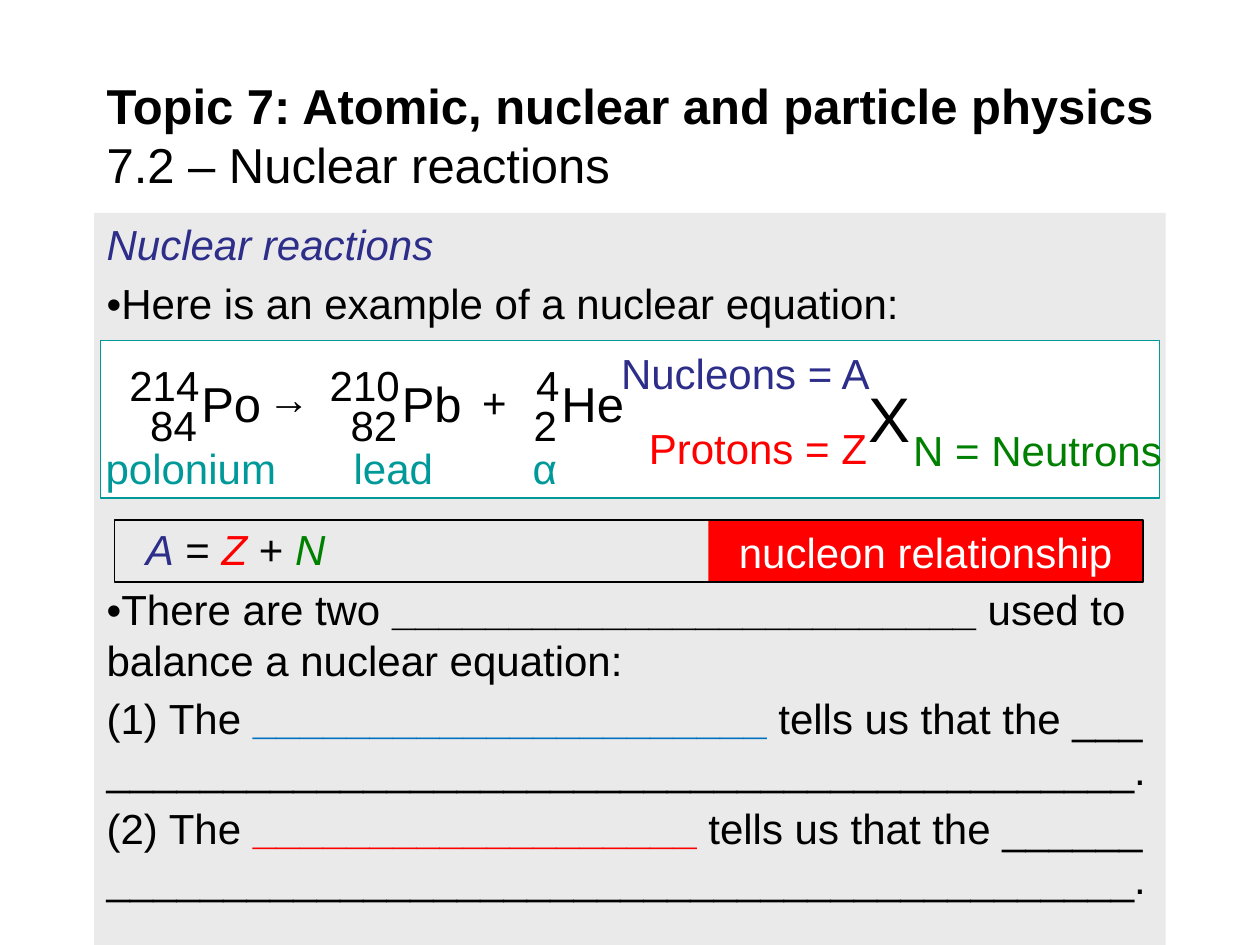
import pptx
import pptx.util
import pptx.dml.color
import pptx.enum.shapes
import pptx.enum.text

Cm, Pt = pptx.util.Cm, pptx.util.Pt
RGBColor = pptx.dml.color.RGBColor
ALIGN = pptx.enum.text.PP_ALIGN
ANCHOR = pptx.enum.text.MSO_ANCHOR

BLACK = RGBColor(0x00, 0x00, 0x00)
WHITE = RGBColor(0xFF, 0xFF, 0xFF)
GREY = RGBColor(0xEA, 0xEA, 0xEA)
NAVY = RGBColor(0x2D, 0x2D, 0x8A)
TEAL = RGBColor(0x00, 0x99, 0x99)
RED = RGBColor(0xFF, 0x00, 0x00)
GREEN = RGBColor(0x00, 0x80, 0x00)
BLUE = RGBColor(0x00, 0x70, 0xC0)


def add_rect(slide, x, y, w, h, fill=None, line=None, weight=1):
    sp = slide.shapes.add_shape(pptx.enum.shapes.MSO_SHAPE.RECTANGLE,
                                Cm(x), Cm(y), Cm(w), Cm(h))
    sp.shadow.inherit = False
    if fill is None:
        sp.fill.background()
    else:
        sp.fill.solid()
        sp.fill.fore_color.rgb = fill
    if line is None:
        sp.line.fill.background()
    else:
        sp.line.color.rgb = line
        sp.line.width = Pt(weight)
    return sp


def write(sp, paragraphs, size=24, color=BLACK, align=ALIGN.LEFT,
          anchor=ANCHOR.TOP, before=(), spacing=None, wrap=True):
    """Fill a shape with paragraphs, each a list of (text, format) runs."""
    tf = sp.text_frame
    tf.word_wrap = wrap
    tf.vertical_anchor = anchor
    for i, runs in enumerate(paragraphs):
        p = tf.add_paragraph() if i else tf.paragraphs[0]
        p.alignment = align
        if before:
            p.space_before = Pt(before[i])
        if spacing:
            p.line_spacing = spacing
        for text, style in runs:
            r = p.add_run()
            r.text = text
            r.font.name = "Arial"
            r.font.size = Pt(size)
            r.font.bold = style.get("bold", False)
            r.font.italic = style.get("italic", False)
            r.font.color.rgb = style.get("color", color)


def add_text(slide, x, y, w, h, text, **style):
    """Add a text box; text is a string or a list of paragraphs of runs."""
    sp = slide.shapes.add_textbox(Cm(x), Cm(y), Cm(w), Cm(h))
    write(sp, [[(text, {})]] if isinstance(text, str) else text, **style)


def add_title(slide, x, y, w, h):
    add_text(slide, x, y, w, h, [
        [("Topic 7: Atomic, nuclear and particle physics", {"bold": True})],
        [("7.2 – Nuclear reactions", {})],
    ], size=28, anchor=ANCHOR.MIDDLE)


def add_body(slide, x, y, w, h):
    rule = "_" * 44 + "."

    def law(number, blanks, color, tail):
        return [(f"({number}) The ", {}),
                ("_" * blanks + " ", {"bold": True, "color": color}),
                (f"tells us that the {'_' * tail} {rule}", {})]

    write(add_rect(slide, x, y, w, h, fill=GREY), [
        [("Nuclear reactions", {"italic": True, "color": NAVY})],
        [("•Here is an example of a nuclear equation:", {})],
        [("•There are two ", {}), ("_" * 25 + " ", {"bold": True}),
         ("used to balance a nuclear equation:", {})],
        law(1, 22, BLUE, 3),
        law(2, 19, RED, 6),
    ], before=(0, 4.8, 146, 4.8, 4.8))


def add_nuclide(slide, x, y, mass, charge, symbol):
    """Place a symbol at x with its numbers right-aligned before it."""
    add_text(slide, x, y + 0.3, 2.08, 1.09, symbol, size=28, spacing=0.9)
    for number, right, top in ((mass, 0.46, 0), (charge, 0.41, 0.8)):
        add_text(slide, x + right - 2.03, y + top, 2.03, 1.09, number,
                 align=ALIGN.RIGHT, spacing=0.9)


def add_equation(slide, x, y, w, h):
    add_rect(slide, x, y, w, h, fill=WHITE, line=TEAL, weight=0.75)
    nuclides = (
        (1.78, "214", "84", "Po", -0.15, 3.99, "polonium"),
        (5.82, "210", "82", "Pb", 4.85, 2.64, "lead"),
        (9.04, "4", "2", "He", 8.46, 1.04, "α"),
    )
    for dx, mass, charge, symbol, name_dx, name_w, name in nuclides:
        add_nuclide(slide, x + dx, y + 0.38, mass, charge, symbol)
        add_text(slide, x + name_dx, y + 1.93, name_w, 1.27, name, color=TEAL)
    for dx, dy, sign in ((3.12, 0.63, "→"), (7.44, 0.73, "+")):
        add_text(slide, x + dx, y + dy, 1.88, 1.09, sign, spacing=0.9)


def add_notation(slide, x, y):
    """Place the general X symbol with its three labelled numbers."""
    labels = (
        (4.98, 0.64, 1.37, 1.8, "X", BLACK, 36),
        (0, 0, 5.59, 1.3, "Nucleons = A", NAVY, 24),
        (0.56, 1.52, 4.95, 1.3, "Protons = Z", RED, 24),
        (5.89, 1.55, 5.56, 1.3, "N = Neutrons", GREEN, 24),
    )
    for dx, dy, w, h, text, color, size in labels:
        add_text(slide, x + dx, y + dy, w, h, text, color=color, size=size,
                 wrap=False)


def add_relationship(slide, x, y, w, h):
    label_w = 8.76
    add_text(slide, x + 0.38, y + 0.05, 11.6, 0.89, [[
        ("A", {"italic": True, "color": NAVY}), (" = ", {}),
        ("Z", {"italic": True, "color": RED}), (" + ", {}),
        ("N", {"italic": True, "color": GREEN}),
    ]], spacing=0.9)
    write(add_rect(slide, x + w - label_w, y, label_w, h, fill=RED),
          [[("nucleon relationship", {})]], color=WHITE, align=ALIGN.CENTER)
    add_rect(slide, x, y, w, h, line=BLACK)


def main():
    prs = pptx.Presentation()
    prs.slide_width, prs.slide_height = Cm(25.4), Cm(19.05)
    slide = prs.slides.add_slide(prs.slide_layouts[6])
    add_body(slide, 1.9, 4.29, 21.6, 14.76)
    add_equation(slide, 2.03, 6.86, 21.34, 3.18)
    add_title(slide, 1.9, 1.47, 22.45, 2.49)
    add_notation(slide, 12.27, 6.88)
    add_relationship(slide, 2.31, 10.49, 20.73, 1.25)
    prs.save("out.pptx")


if __name__ == "__main__":
    main()
